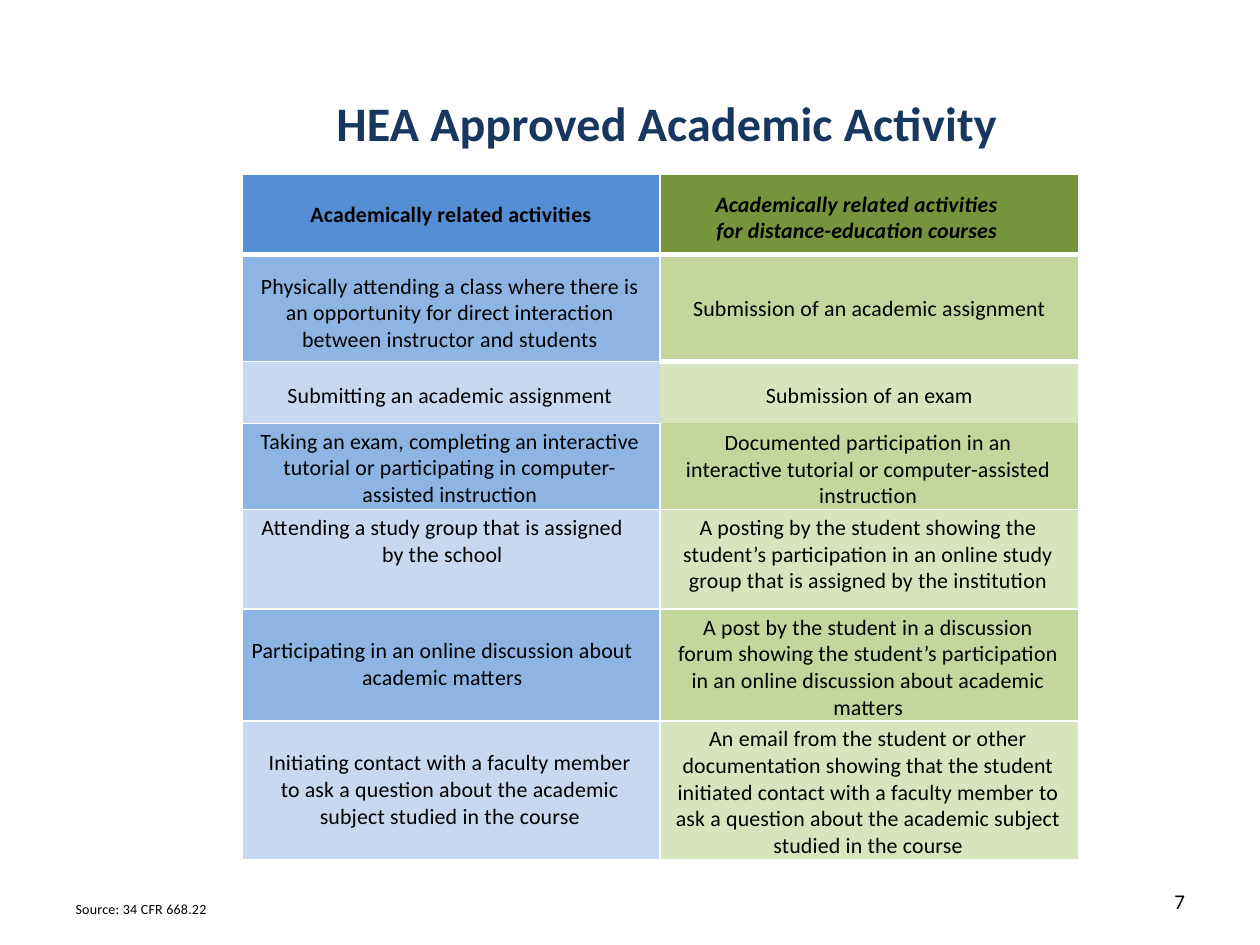
from lxml import etree
from pptx import Presentation
from pptx import util as u
from pptx.dml.color import RGBColor
from pptx.enum import text
from pptx.oxml.ns import qn

FONT = "Calibri"
COLORS = {
    "title": "17375E", "text": "000000", "border": "FFFFFF",
    "blue_head": "558ED5", "blue_dark": "8EB4E3", "blue_light": "C6D9F1",
    "green_head": "77933C", "green_dark": "C3D69B", "green_light": "D7E4BD",
}
ROW_HEIGHTS = [0.64, 0.85, 0.49, 0.64, 0.79, 0.84, 1.03]
COLUMN_WIDTH = 3.32

# Each cell: wording, top margin, right margin
ROWS = [
    [("Academically related activities", 0.22, 0),
     ("Academically related activities\nfor distance-education courses", 0.14, 0.2)],
    [("Physically attending a class where there is\nan opportunity for direct interaction\n"
      "between instructor and students", 0.15, 0.02),
     ("Submission of an academic assignment", 0.33, 0)],
    [("Submitting an academic assignment", 0.17, 0.02),
     ("Submission of an exam", 0.17, 0)],
    [("Taking an exam, completing an interactive\ntutorial or participating in computer-\n"
      "assisted instruction", 0.04, 0.02),
     ("Documented participation in an\ninteractive tutorial or computer-assisted\n"
      "instruction", 0.05, 0.02)],
    [("Attending a study group that is assigned\nby the school", 0.04, 0.14),
     ("A posting by the student showing the\nstudent’s participation in an online study\n"
      "group that is assigned by the institution", 0.04, 0.02)],
    [("Participating in an online discussion about\nacademic matters", 0.23, 0.14),
     ("A post by the student in a discussion\nforum showing the student’s participation\n"
      "in an online discussion about academic\nmatters", 0.04, 0.02)],
    [("Initiating contact with a faculty member\nto ask a question about the academic\n"
      "subject studied in the course", 0.23, 0.02),
     ("An email from the student or other\ndocumentation showing that the student\n"
      "initiated contact with a faculty member to\nask a question about the academic subject\n"
      "studied in the course", 0.04, 0.02)],
]

# Border widths in points that differ from 1, by (row, column) and side
SPECIAL_BORDERS = {
    (0, 0): {"B": 3}, (0, 1): {"B": 3},
    (1, 0): {"T": 3}, (1, 1): {"T": 3, "B": 3},
    (2, 0): {"R": 0}, (2, 1): {"L": 0, "R": 0, "T": 3, "B": 0},
    (3, 1): {"T": 0},
}


def add_lines(para, wording, size, color="text", bold=False, italic=False, spacing=0.1):
    """Write wording into para, one run per line."""
    for number, line in enumerate(wording.split("\n")):
        if number:
            para.add_line_break()
        span = para.add_run()
        span.text = line
        font = span.font
        font.name, font.size = FONT, u.Pt(size)
        font.bold, font.italic = bold, italic
        font.color.rgb = RGBColor.from_string(COLORS[color])
        font._element.set("spc", str(round(spacing * 100)))


def clear_margins(frame):
    frame.margin_left = frame.margin_right = frame.margin_top = frame.margin_bottom = 0


def add_title(page, wording):
    title = page.shapes.title
    title.left, title.top = u.Inches(2.67), u.Inches(0.74)
    title.width, title.height = u.Inches(6.01), u.Inches(0.46)
    frame = title.text_frame
    clear_margins(frame)
    frame.vertical_anchor = text.MSO_ANCHOR.TOP
    para = frame.paragraphs[0]
    para.alignment = text.PP_ALIGN.LEFT
    add_lines(para, wording, 27.5, "title", bold=True)


def add_note(page, wording, left, top, width, height, size):
    box = page.shapes.add_textbox(*map(u.Inches, (left, top, width, height)))
    clear_margins(box.text_frame)
    box.text_frame.word_wrap = False
    add_lines(box.text_frame.paragraphs[0], wording, size)


def set_borders(cell, widths):
    properties = cell._tc.get_or_add_tcPr()
    for side in "LRTB":
        points = widths.get(side, 1)
        line = etree.SubElement(properties, qn("a:ln" + side), w=str(u.Pt(points)))
        if points:
            fill = etree.SubElement(line, qn("a:solidFill"))
            etree.SubElement(fill, qn("a:srgbClr"), val=COLORS["border"])
        else:
            etree.SubElement(line, qn("a:noFill"))


def fill_cell(cell, row, column, wording, top, right):
    set_borders(cell, SPECIAL_BORDERS.get((row, column), {}))
    shade = "head" if row == 0 else "dark" if row % 2 else "light"
    cell.fill.solid()
    cell.fill.fore_color.rgb = RGBColor.from_string(
        COLORS[f"{('blue', 'green')[column]}_{shade}"])
    clear_margins(cell)
    cell.margin_top, cell.margin_right = u.Inches(top), u.Inches(right)
    cell.vertical_anchor = text.MSO_ANCHOR.TOP
    para = cell.text_frame.paragraphs[0]
    para.alignment = text.PP_ALIGN.CENTER
    add_lines(para, wording, 12.5, bold=row == 0, italic=row == 0 and column == 1)


def add_activity_table(page):
    table = page.shapes.add_table(
        len(ROWS), 2, u.Inches(1.92), u.Inches(1.38),
        u.Inches(2 * COLUMN_WIDTH), u.Inches(sum(ROW_HEIGHTS))).table
    for column in table.columns:
        column.width = u.Inches(COLUMN_WIDTH)
    for row, cells in enumerate(ROWS):
        table.rows[row].height = u.Inches(ROW_HEIGHTS[row])
        for column, content in enumerate(cells):
            fill_cell(table.cell(row, column), row, column, *content)


def main():
    deck = Presentation()
    deck.slide_width, deck.slide_height = u.Inches(10), u.Inches(7.5)
    page = deck.slides.add_slide(deck.slide_layouts[5])
    add_title(page, "HEA Approved Academic Activity")
    add_activity_table(page)
    add_note(page, "Source: 34 CFR 668.22", 0.6, 7.15, 1.05, 0.16, 8)
    add_note(page, "7", 9.32, 7.05, 0.11, 0.2, 12)
    deck.save("out.pptx")


if __name__ == "__main__":
    main()
